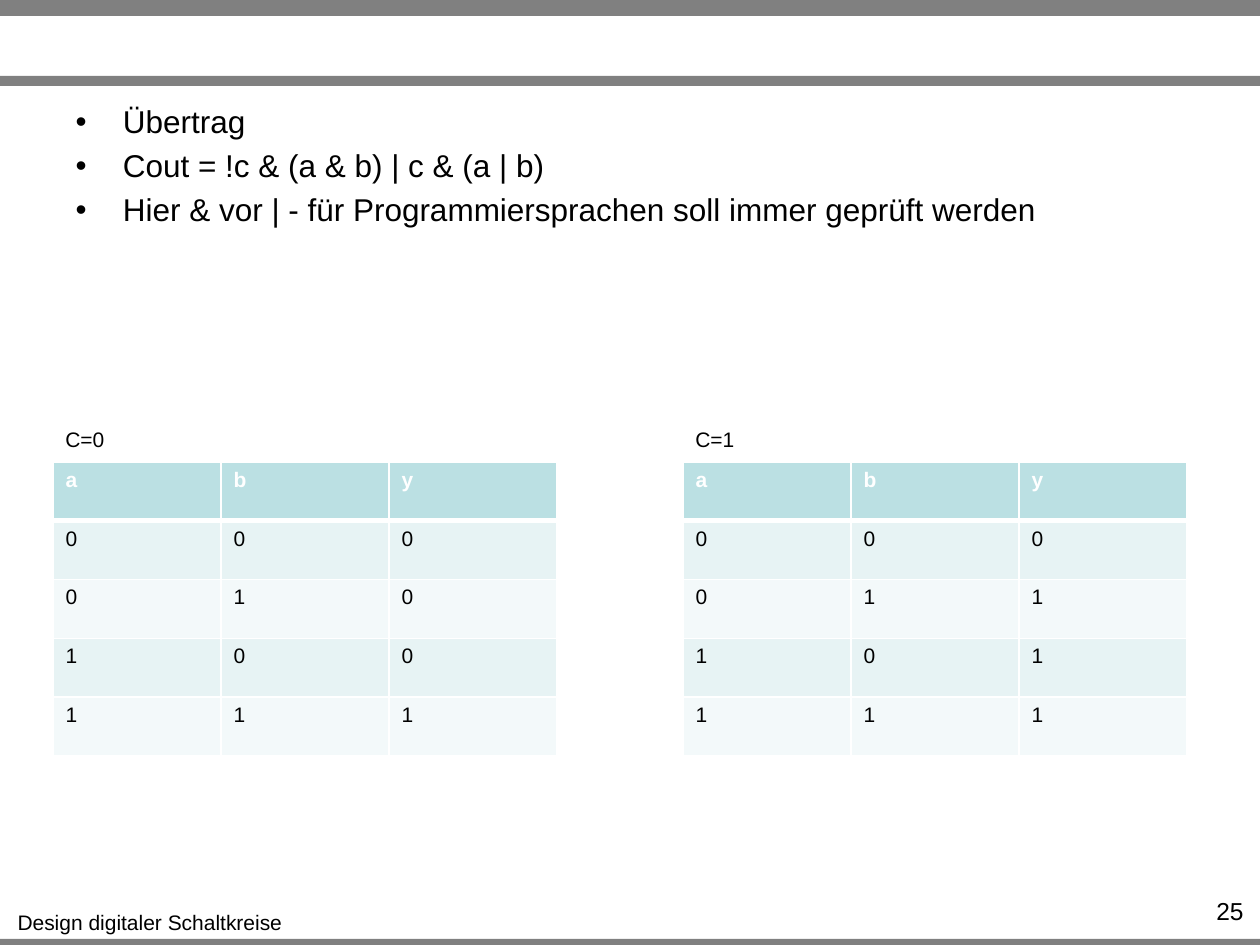
from lxml import etree
from pptx import Presentation
from pptx.dml.color import RGBColor
from pptx.enum.shapes import MSO_SHAPE
from pptx.enum.text import PP_ALIGN
from pptx.oxml.ns import qn
from pptx.util import Pt

RECT = MSO_SHAPE.RECTANGLE
LEFT, MID, RIGHT = PP_ALIGN.LEFT, PP_ALIGN.CENTER, PP_ALIGN.RIGHT
PX = 914400 // 126
FONT = "Arial"
COLORS = {"bar": "808080", "text": "000000", "white": "FFFFFF",
          "head": "BBE0E3", "odd": "E7F3F4", "even": "F3F9FA"}

# Content
BARS = [(939, 10), (0, 16), (76, 10)]  # top, height
POINTS = ["Übertrag",
          "Cout = !c & (a & b) | c & (a | b)",
          "Hier & vor | - für Programmiersprachen soll immer geprüft werden"]
FOOTER = "Design digitaler Schaltkreise"
PAGE = "25"
HEAD = ["a", "b", "y"]
INPUTS = [(0, 0), (0, 1), (1, 0), (1, 1)]
TABLES = [("C=0", 53, [0, 0, 0, 1]),  # label, left, values of y
          ("C=1", 683, [0, 1, 1, 1])]


def box(*dims):
    return [d * PX for d in dims]


def color(name):
    return RGBColor.from_string(COLORS[name])


def write(para, text, size, align=LEFT, tint="text", bold=False):
    para.alignment = align
    run = para.add_run()
    run.text = text
    font = run.font
    font.name, font.size, font.bold = FONT, Pt(size), bold
    font.color.rgb = color(tint)


def label(slide, text, dims, size, align, wrap=False):
    frame = slide.shapes.add_textbox(*box(*dims)).text_frame
    frame.word_wrap = wrap
    write(frame.paragraphs[0], text, size, align)


def border(cell, row):
    props = cell._tc.get_or_add_tcPr()
    widths = {"L": 1, "R": 1, "T": 3 if row == 1 else 1, "B": 3 if row == 0 else 1}
    for spot, (side, width) in enumerate(widths.items()):
        line = etree.Element(qn("a:ln" + side), w=str(Pt(width)))
        fill = etree.SubElement(line, qn("a:solidFill"))
        etree.SubElement(fill, qn("a:srgbClr"), val=COLORS["white"])
        props.insert(spot, line)


def truth(slide, left, rows):
    grid = slide.shapes.add_table(len(rows), len(HEAD), *box(left, 462, 504, 294)).table
    for r, row in enumerate(rows):
        shade = "head" if r == 0 else "odd" if r % 2 else "even"
        for c, value in enumerate(row):
            cell = grid.cell(r, c)
            cell.fill.solid()
            cell.fill.fore_color.rgb = color(shade)
            border(cell, r)
            write(cell.text_frame.paragraphs[0], str(value), 12,
                  tint="text" if r else "white", bold=r == 0)


def main():
    deck = Presentation()
    deck.slide_width, deck.slide_height = box(1260, 945)
    slide = deck.slides.add_slide(deck.slide_layouts[1])
    title = slide.shapes.title.element
    title.getparent().remove(title)

    # Bars
    for top, height in BARS:
        bar = slide.shapes.add_shape(RECT, *box(0, top, 1260, height))
        bar.shadow.inherit = False
        bar.fill.solid()
        bar.fill.fore_color.rgb = color("bar")
        bar.line.fill.background()

    # Bullets come from the body placeholder
    body = slide.placeholders[1]
    body.left, body.top, body.width, body.height = box(63, 96, 1134, 272)
    frame = body.text_frame
    for i, point in enumerate(POINTS):
        para = frame.add_paragraph() if i else frame.paragraphs[0]
        if i == 0:
            para.space_before = Pt(0)
        write(para, point, 18)

    # Footer and page number
    label(slide, FOOTER, (4, 903, 292, 38), 12, MID)
    label(slide, PAGE, (1147, 890, 109, 30), 14, RIGHT, True)

    # Truth tables
    for name, left, outs in TABLES:
        label(slide, name, (left, 420, 64, 38), 12, MID)
        truth(slide, left, [HEAD] + [(*ab, y) for ab, y in zip(INPUTS, outs)])

    deck.save("out.pptx")


if __name__ == "__main__":
    main()
